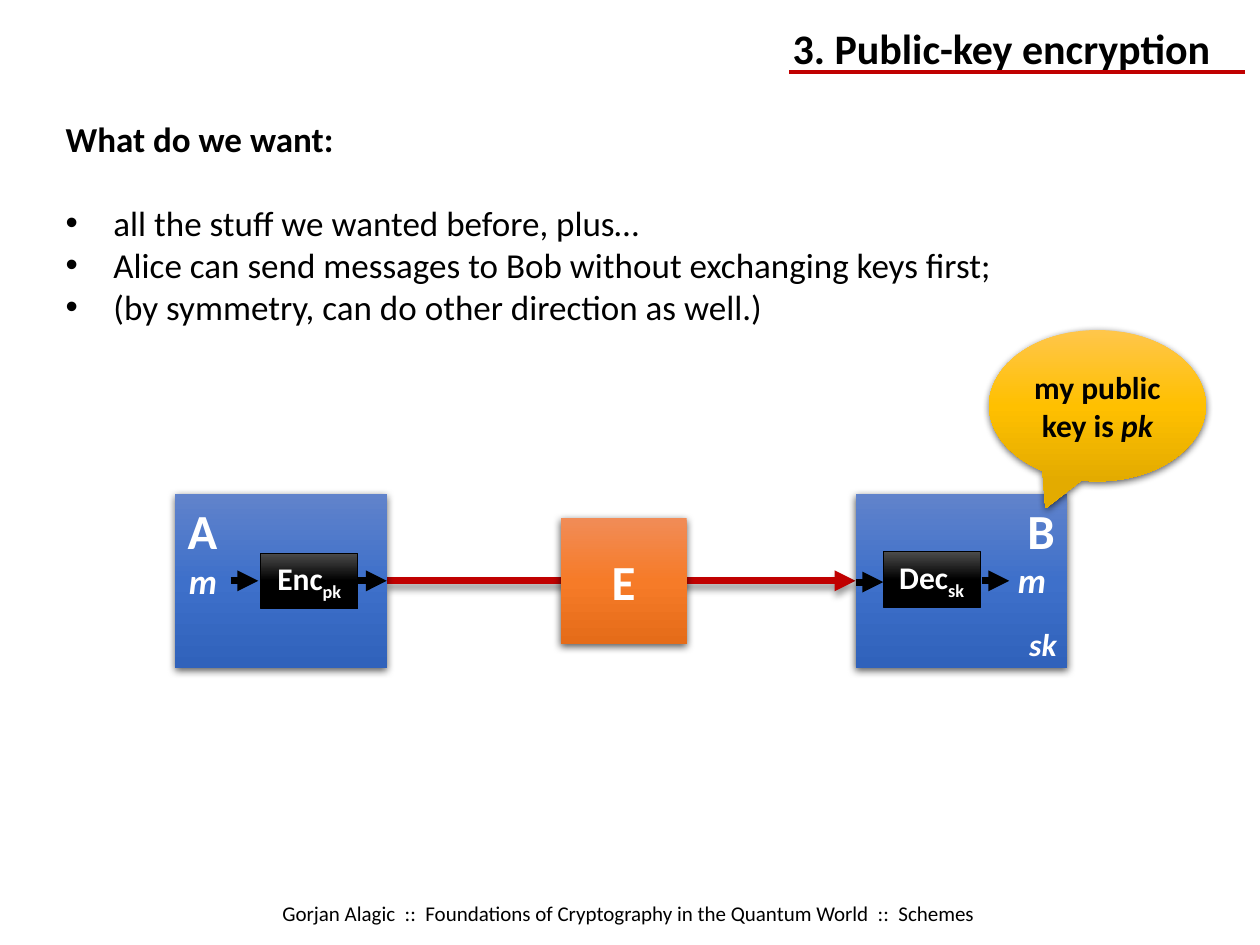
from copy import deepcopy
from dataclasses import dataclass

from lxml.etree import SubElement
from pptx import Presentation
from pptx.dml.color import RGBColor as RGB
from pptx.enum.shapes import MSO_CONNECTOR as Link, MSO_SHAPE as Kind
from pptx.enum.text import MSO_ANCHOR as Anchor, MSO_AUTO_SIZE as Fit, PP_ALIGN as Align
from pptx.oxml.ns import qn
from pptx.util import Inches, Pt


@dataclass(frozen=True)
class Theme:
    font: str = "Calibri"
    ink: str = "000000"
    white: str = "FFFFFF"
    red: str = "C00000"
    blue: tuple = ("6183CB", "3E70CA", "3062BB")
    orange: tuple = ("F18C57", "F67B28", "E56C19")
    gold: tuple = ("FFC64B", "FFC000", "E3AB00")
    black: tuple = ("4B4B4B", "000000", "000000")
    head: int = 24
    body: int = 20
    party: int = 28
    label: int = 18
    foot: int = 12


T = Theme()
BOX_SHADE = (63, 4.5, 1.5)  # opacity %, blur pt, distance pt
WIRE_SHADE = (40, 4, 3)

TITLE = "3. Public-key encryption"
LEAD = "What do we want:"
WANTS = [
    "all the stuff we wanted before, plus…",
    "Alice can send messages to Bob without exchanging keys first;",
    "(by symmetry, can do other direction as well.)",
]
FOOT = "Gorjan Alagic  ::  Foundations of Cryptography in the Quantum World  ::  Schemes"

# Runs are (text, style); style letters: b bold, i italic, s subscript
PARTIES = [  # text, place, colours, alignment, anchor
    ("A", (1.39, 3.92, 1.68, 1.38), T.blue, Align.LEFT, Anchor.TOP),
    ("B", (6.79, 3.92, 1.68, 1.38), T.blue, Align.RIGHT, Anchor.TOP),
    ("E", (4.45, 4.11, 1, 1), T.orange, Align.CENTER, Anchor.MIDDLE),
]
STEPS = [("Enc", "pk", 2.07, 4.39), ("Dec", "sk", 7.01, 4.38)]
NOTES = [  # text, place, size
    ("m", (1.4, 4.39, 0.43, 0.44), T.body),
    ("m", (7.98, 4.38, 0.43, 0.44), T.body),
    ("sk", (8.07, 4.91, 0.42, 0.4), T.label),
]
ARROWS = [(1.83, 2.05, 4.61), (2.84, 3.07, 4.61), (6.79, 7.01, 4.62), (7.79, 8.01, 4.61)]
CALLOUT = [("my public key is ", "b"), ("pk", "bi")]


def place(shape, box):
    shape.left, shape.top, shape.width, shape.height = map(Inches, box)


def write(par, runs, size, color, align=Align.LEFT):
    par.alignment = align
    for text, style in runs:
        run = par.add_run()
        run.text = text
        font = run.font
        font.name, font.size = T.font, Pt(size)
        font.color.rgb = RGB.from_string(color)
        font.bold, font.italic = "b" in style, "i" in style
        if "s" in style:
            run._r.get_or_add_rPr().set("baseline", "-25000")


def shade(props, look):
    """Put an outer shadow, or none, on shape properties."""
    effects = props.find(qn("a:effectLst"))
    if effects is None:
        effects = SubElement(props, qn("a:effectLst"))
    if look:
        alpha, blur, dist = look
        outer = SubElement(effects, qn("a:outerShdw"), blurRad=str(Pt(blur)),
                           dist=str(Pt(dist)), dir="5400000", rotWithShape="0")
        color = SubElement(outer, qn("a:srgbClr"), val=T.ink)
        SubElement(color, qn("a:alpha"), val=str(alpha * 1000))


def blend(shape, colors):
    """Fill from top to bottom with three even stops."""
    fill = shape.fill
    fill.gradient()
    fill.gradient_angle = 270
    stops = shape._element.spPr.find(".//" + qn("a:gsLst"))
    stops.append(deepcopy(stops[-1]))
    for i, (stop, color) in enumerate(zip(fill.gradient_stops, colors)):
        stop.position = i / 2
        stop.color.rgb = RGB.from_string(color)


def block(slide, kind, box, colors, runs, size, color=T.white, align=Align.CENTER,
          anchor=Anchor.MIDDLE, look=BOX_SHADE):
    shape = slide.shapes.add_shape(kind, *map(Inches, box))
    shape.shadow.inherit = False
    blend(shape, colors)
    shape.line.fill.background()
    shade(shape._element.spPr, look)
    frame = shape.text_frame
    frame.word_wrap, frame.vertical_anchor = True, anchor
    write(frame.paragraphs[0], runs, size, color, align)
    return shape


def label(slide, box, runs, size, color, align=Align.LEFT, wrap=False):
    frame = slide.shapes.add_textbox(*map(Inches, box)).text_frame
    frame.word_wrap = wrap
    write(frame.paragraphs[0], runs, size, color, align)


def line(slide, start, end, y, color, width, head=True, look=None):
    link = slide.shapes.add_connector(
        Link.STRAIGHT, Inches(start), Inches(y), Inches(end), Inches(y))
    link.line.color.rgb = RGB.from_string(color)
    link.line.width = Pt(width)
    if head:
        SubElement(link.line._get_or_add_ln(), qn("a:tailEnd"), type="triangle")
    shade(link._element.spPr, look)


def bullet(par, mark):
    props = par._p.get_or_add_pPr()
    inset = Inches(0.38) if mark else 0
    props.set("marL", str(inset))
    props.set("indent", str(-inset))
    if mark:
        SubElement(props, qn("a:buFont"), typeface="Arial")
        SubElement(props, qn("a:buChar"), char=mark)
    else:
        SubElement(props, qn("a:buNone"))


def words(slide):
    title, body = slide.shapes.title, slide.placeholders[1]
    place(title, (6.19, 0.13, 3.69, 0.5))
    place(body, (0.42, 0.88, 9.3, 1.78))
    for shape in (title, body):
        frame = shape.text_frame
        frame.auto_size, frame.vertical_anchor = Fit.NONE, Anchor.TOP
    title.text_frame.word_wrap = False
    write(title.text_frame.paragraphs[0], [(TITLE, "b")], T.head, T.ink)

    frame = body.text_frame
    for i, text in enumerate([LEAD] + WANTS):
        par = frame.add_paragraph() if i else frame.paragraphs[0]
        par.space_before = Pt(T.body * 1.2 if i == 1 else 0)
        bullet(par, "•" if i else None)
        write(par, [(text, "" if i else "b")], T.body, T.ink)
    label(slide, (0.27, 7.1, 9.44, 0.3), [(FOOT, "")], T.foot, T.ink, Align.CENTER, True)


def scheme(slide):
    line(slide, 3.07, 6.79, 4.61, T.red, 4, look=WIRE_SHADE)
    for text, box, colors, align, anchor in PARTIES:
        block(slide, Kind.RECTANGLE, box, colors, [(text, "b")], T.party,
              align=align, anchor=anchor)
    for name, key, x, y in STEPS:
        step = block(slide, Kind.RECTANGLE, (x, y, 0.77, 0.44), T.black,
                     [(name, "b"), (key, "bs")], T.label, look=None)
        step.line.color.rgb = RGB.from_string(T.ink)
        step.line.width = Pt(0.5)
    for start, end, y in ARROWS:
        line(slide, start, end, y, T.ink, 4)
    for text, box, size in NOTES:
        label(slide, box, [(text, "bi")], size, T.white)
    bubble = block(slide, Kind.OVAL_CALLOUT, (7.85, 2.62, 1.72, 1.2), T.gold,
                   CALLOUT, T.label, T.ink)
    bubble.adjustments[0], bubble.adjustments[1] = -0.24, 0.68


def main():
    deck = Presentation()
    deck.slide_width, deck.slide_height = Inches(10), Inches(7.5)
    slide = deck.slides.add_slide(deck.slide_layouts[1])
    words(slide)
    line(slide, 9.88, 6.26, 0.57, T.red, 2.25, head=False)
    scheme(slide)
    deck.save("out.pptx")


if __name__ == "__main__":
    main()
